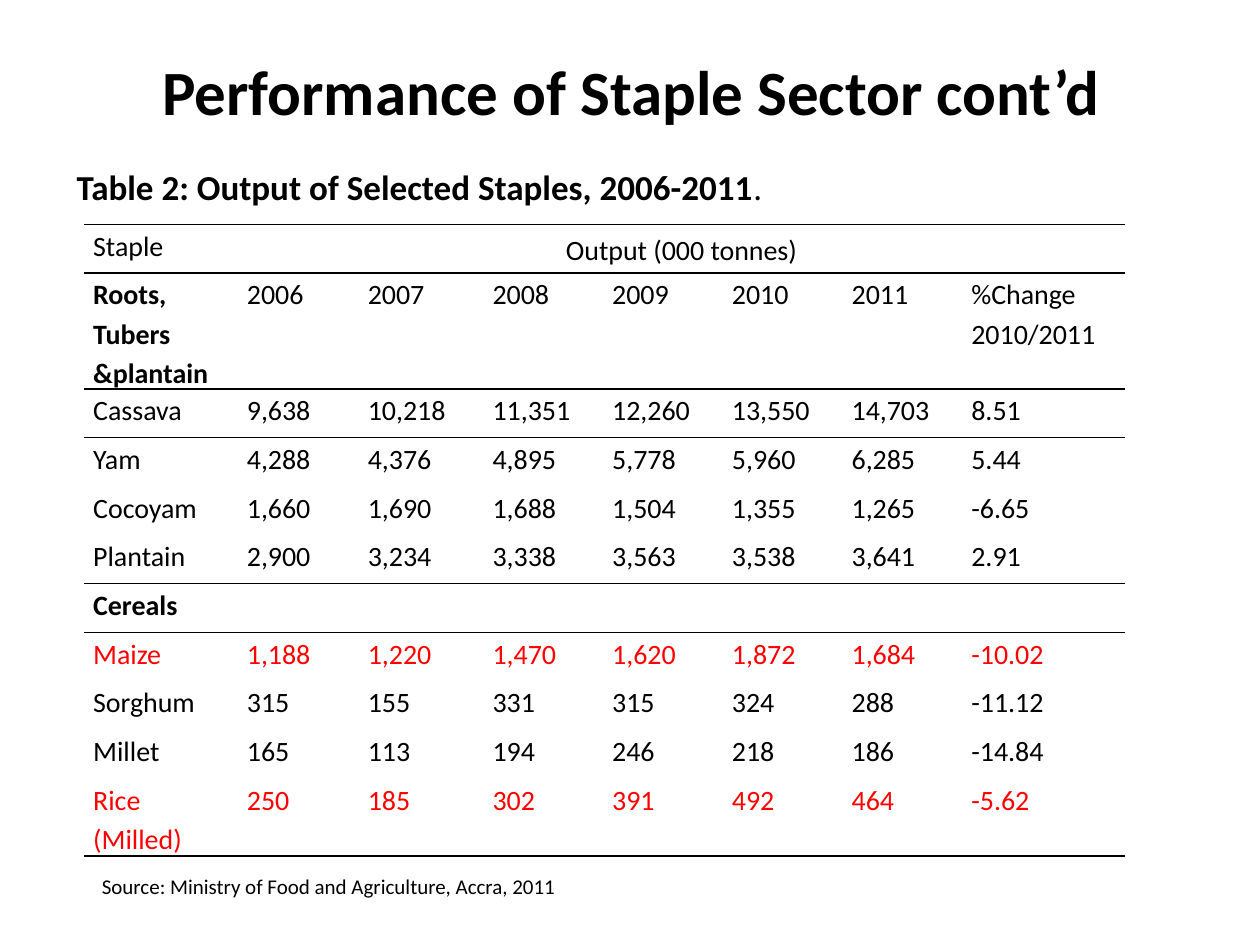
from lxml.etree import SubElement
from pptx import Presentation
from pptx.dml.color import RGBColor
from pptx.enum.text import MSO_ANCHOR as Anchor, PP_ALIGN as Align
from pptx.oxml.ns import qn
from pptx.util import Inches, Pt

COLORS = {"ink": "000000", "alert": "FF0000"}
FONT = "Calibri"
NO_STYLE = "{2D5ABB26-0587-4C30-8999-92F81FD0307C}"
COLUMN_WIDTHS = [1.22, 0.96, 0.99, 0.95, 0.95, 0.95, 0.95, 1.29]
ROW_UNIT = 4.64 / 12
STAPLES = [
    ["Staple", "Output (000 tonnes)"],
    ["Roots, Tubers &plantain", "2006", "2007", "2008", "2009", "2010", "2011", "%Change 2010/2011"],
    ["Cassava", "9,638", "10,218", "11,351", "12,260", "13,550", "14,703", "8.51"],
    ["Yam", "4,288", "4,376", "4,895", "5,778", "5,960", "6,285", "5.44"],
    ["Cocoyam", "1,660", "1,690", "1,688", "1,504", "1,355", "1,265", "-6.65"],
    ["Plantain", "2,900", "3,234", "3,338", "3,563", "3,538", "3,641", "2.91"],
    ["Cereals"],
    ["Maize", "1,188", "1,220", "1,470", "1,620", "1,872", "1,684", "-10.02"],
    ["Sorghum", "315", "155", "331", "315", "324", "288", "-11.12"],
    ["Millet", "165", "113", "194", "246", "218", "186", "-14.84"],
    ["Rice (Milled)", "250", "185", "302", "391", "492", "464", "-5.62"],
]
GROUP_ROWS = {1, 6}
ALERT_ROWS = {7, 10}
RULED_BELOW = {-1, 0, 1, 5, 10}


def write(frame, *parts, size=16, color="ink", bold=False, align=Align.LEFT, spacing=None):
    """Write text parts into a frame; a (text, bold) pair overrides the weight."""
    frame.word_wrap = True
    paragraph = frame.paragraphs[0]
    paragraph.alignment = align
    paragraph.line_spacing = spacing
    for part in parts:
        words, weight = part if isinstance(part, tuple) else (part, bold)
        run = paragraph.add_run()
        run.text = words
        run.font.name, run.font.size, run.font.bold = FONT, Pt(size), weight
        run.font.color.rgb = RGBColor.from_string(COLORS[color])


def add_label(slide, left, top, width, height, *parts, anchor=Anchor.MIDDLE, **text_format):
    """Place a text box, measured in inches."""
    label = slide.shapes.add_textbox(*map(Inches, (left, top, width, height)))
    write(label.text_frame, *parts, **text_format)
    label.text_frame.vertical_anchor = anchor
    return label


def rule_cell(cell, row):
    """Draw the horizontal rules that touch a cell in the given row."""
    properties = cell._tc.get_or_add_tcPr()
    for side, boundary in (("a:lnT", row - 1), ("a:lnB", row)):
        if boundary in RULED_BELOW:
            line = SubElement(properties, qn(side), w=str(Pt(1)))
            SubElement(SubElement(line, qn("a:solidFill")), qn("a:srgbClr"), val=COLORS["ink"])


def add_staples_table(slide, left, top):
    """Build the output table with rules between its groups."""
    size = len(STAPLES), len(COLUMN_WIDTHS)
    total = sum(COLUMN_WIDTHS), ROW_UNIT * (len(STAPLES) + 1)
    table = slide.shapes.add_table(*size, *map(Inches, (left, top, *total))).table
    table._tbl.tblPr.find(qn("a:tableStyleId")).text = NO_STYLE
    table.first_row = table.horz_banding = False
    for column, width in zip(table.columns, COLUMN_WIDTHS):
        column.width = Inches(width)
    for r, values in enumerate(STAPLES):
        table.rows[r].height = Inches(ROW_UNIT * (2 if r == 1 else 1))
        for c in range(len(COLUMN_WIDTHS)):
            cell = table.cell(r, c)
            cell.margin_left = cell.margin_right = Inches(0.07)
            cell.margin_top = cell.margin_bottom = 0
            rule_cell(cell, r)
            cell.fill.background()
            spanning = (r, c) == (0, 1)
            if spanning:
                cell.vertical_anchor = Anchor.MIDDLE
            write(cell.text_frame, *values[c:c + 1], spacing=1.15,
                  bold=c == 0 and r in GROUP_ROWS,
                  color="alert" if r in ALERT_ROWS else "ink",
                  align=Align.CENTER if spanning else Align.LEFT)
    table.cell(0, 1).merge(table.cell(0, len(COLUMN_WIDTHS) - 1))


def main():
    """Build and save the slide."""
    deck = Presentation()
    deck.slide_width, deck.slide_height = Inches(10), Inches(7.5)
    slide = deck.slides.add_slide(deck.slide_layouts[6])
    add_label(slide, 0.51, 0.21, 9, 1.02, "Performance of Staple Sector cont’d",
              size=36, bold=True, align=Align.CENTER)
    add_staples_table(slide, 0.67, 1.78)
    add_label(slide, 0.51, 1.26, 8.03, 0.44,
              ("Table 2: Output of Selected Staples, 2006-2011", True), ".", size=20)
    source = add_label(slide, 0.71, 6.88, 3.84, 0.3,
                       "Source: Ministry of Food and Agriculture, Accra, 2011",
                       size=12, anchor=Anchor.TOP)
    source.text_frame.word_wrap = False
    deck.save("out.pptx")


if __name__ == "__main__":
    main()
